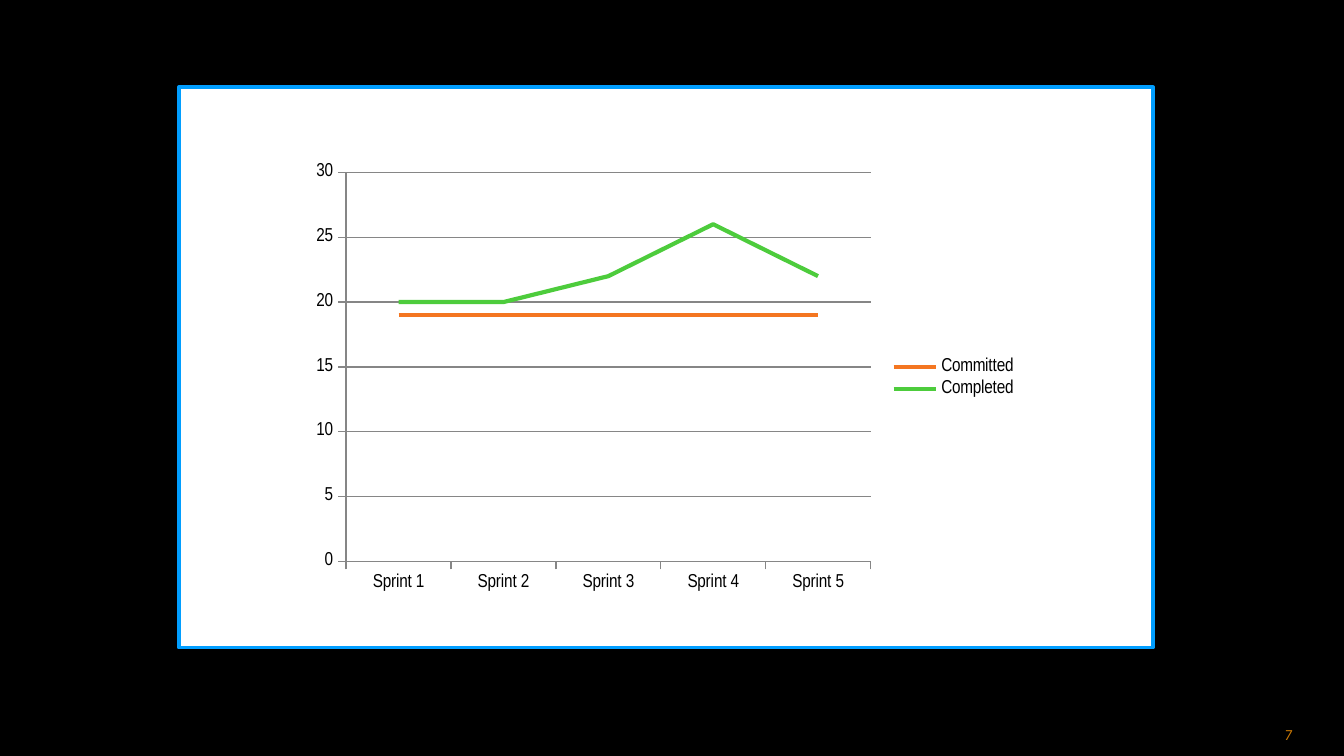
import lxml.etree
import pptx
import pptx.chart.data
import pptx.dml.color
import pptx.enum.chart
import pptx.enum.shapes
import pptx.enum.text
import pptx.oxml.ns
import pptx.util

COLORS = {
    "background": "000000",
    "panel": "FFFFFF",
    "border": "019EFF",
    "text": "000000",
    "axis": "868686",
    "page": "CA7805",
    "Committed": "F47621",
    "Completed": "4DCC3C",
}
SPRINTS = [f"Sprint {number}" for number in range(1, 6)]
POINTS = {
    "Committed": [19, 19, 19, 19, 19],
    "Completed": [20, 20, 22, 26, 22],
}
PLOT_SHARES = {"x": 0.06, "y": 0.04, "w": 0.72, "h": 0.87}


def rgb(name):
    return pptx.dml.color.RGBColor.from_string(COLORS[name])


def inner_box(box, left, top, width, height):
    """Return the box that covers the given percentages of another box."""
    x, y, w, h = box
    return (
        round(x + left * w / 100),
        round(y + top * h / 100),
        round(width * w / 100),
        round(height * h / 100),
    )


def style_line(line, color, points):
    line.color.rgb = rgb(color)
    line.width = pptx.util.Pt(points)


def fix_plot_area(chart):
    """Place the inner plot area at PLOT_SHARES of the chart."""
    qn = pptx.oxml.ns.qn
    plot_area = chart.plots[0]._element.getparent()
    for automatic in plot_area.findall(qn("c:layout")):
        plot_area.remove(automatic)
    layout = lxml.etree.Element(qn("c:layout"))
    manual = lxml.etree.SubElement(layout, qn("c:manualLayout"))
    settings = {"layoutTarget": "inner", "xMode": "edge", "yMode": "edge", **PLOT_SHARES}
    for tag, value in settings.items():
        lxml.etree.SubElement(manual, qn(f"c:{tag}")).set("val", str(value))
    plot_area.insert(0, layout)


def add_velocity_chart(slide, box):
    chart_enum = pptx.enum.chart
    data = pptx.chart.data.CategoryChartData()
    data.categories = SPRINTS
    for name, values in POINTS.items():
        data.add_series(name, values)
    chart = slide.shapes.add_chart(chart_enum.XL_CHART_TYPE.LINE, *box, data).chart
    chart.has_title = False
    chart.font.name = "Arial Narrow"
    chart.font.size = pptx.util.Pt(10)
    chart.font.color.rgb = rgb("text")

    chart.has_legend = True
    chart.legend.position = chart_enum.XL_LEGEND_POSITION.RIGHT
    chart.legend.include_in_layout = False

    for axis in (chart.category_axis, chart.value_axis):
        axis.major_tick_mark = chart_enum.XL_TICK_MARK.OUTSIDE
        axis.minor_tick_mark = chart_enum.XL_TICK_MARK.NONE
        style_line(axis.format.line, "axis", 0.75)
    scale = chart.value_axis
    scale.minimum_scale = 0
    scale.has_major_gridlines = True
    style_line(scale.major_gridlines.format.line, "axis", 0.75)

    chart.plots[0].vary_by_categories = False
    for series in chart.plots[0].series:
        series.smooth = False
        series.marker.style = chart_enum.XL_MARKER_STYLE.NONE
        style_line(series.format.line, series.name, 2.25)
    fix_plot_area(chart)


def add_chart_panel(slide, box):
    panel = slide.shapes.add_shape(pptx.enum.shapes.MSO_SHAPE.RECTANGLE, *box)
    panel.shadow.inherit = False
    panel.fill.solid()
    panel.fill.fore_color.rgb = rgb("panel")
    style_line(panel.line, "border", 2)
    add_velocity_chart(slide, inner_box(box, 12.69, 12, 74.76, 79.86))


def add_page_number(slide, box, number):
    frame = slide.shapes.add_textbox(*box).text_frame
    frame.word_wrap = True
    frame.margin_left = frame.margin_right = 0
    frame.margin_top = frame.margin_bottom = 0
    frame.vertical_anchor = pptx.enum.text.MSO_ANCHOR.MIDDLE
    paragraph = frame.paragraphs[0]
    paragraph.alignment = pptx.enum.text.PP_ALIGN.CENTER
    run = paragraph.add_run()
    run.text = str(number)
    run.font.name = "League Spartan"
    run.font.size = pptx.util.Pt(8)
    run.font.color.rgb = rgb("page")


def main():
    deck = pptx.Presentation()
    deck.slide_width = pptx.util.Inches(10)
    deck.slide_height = deck.slide_width * 9 // 16
    page = (0, 0, deck.slide_width, deck.slide_height)

    slide = deck.slides.add_slide(deck.slide_layouts[6])
    slide.background.fill.solid()
    slide.background.fill.fore_color.rgb = rgb("background")
    add_page_number(slide, inner_box(page, 93.3, 95.82, 5.2, 2.67), 7)
    add_chart_panel(slide, inner_box(page, 13.3, 11.55, 72.5, 74.1))
    deck.save("out.pptx")


if __name__ == "__main__":
    main()
